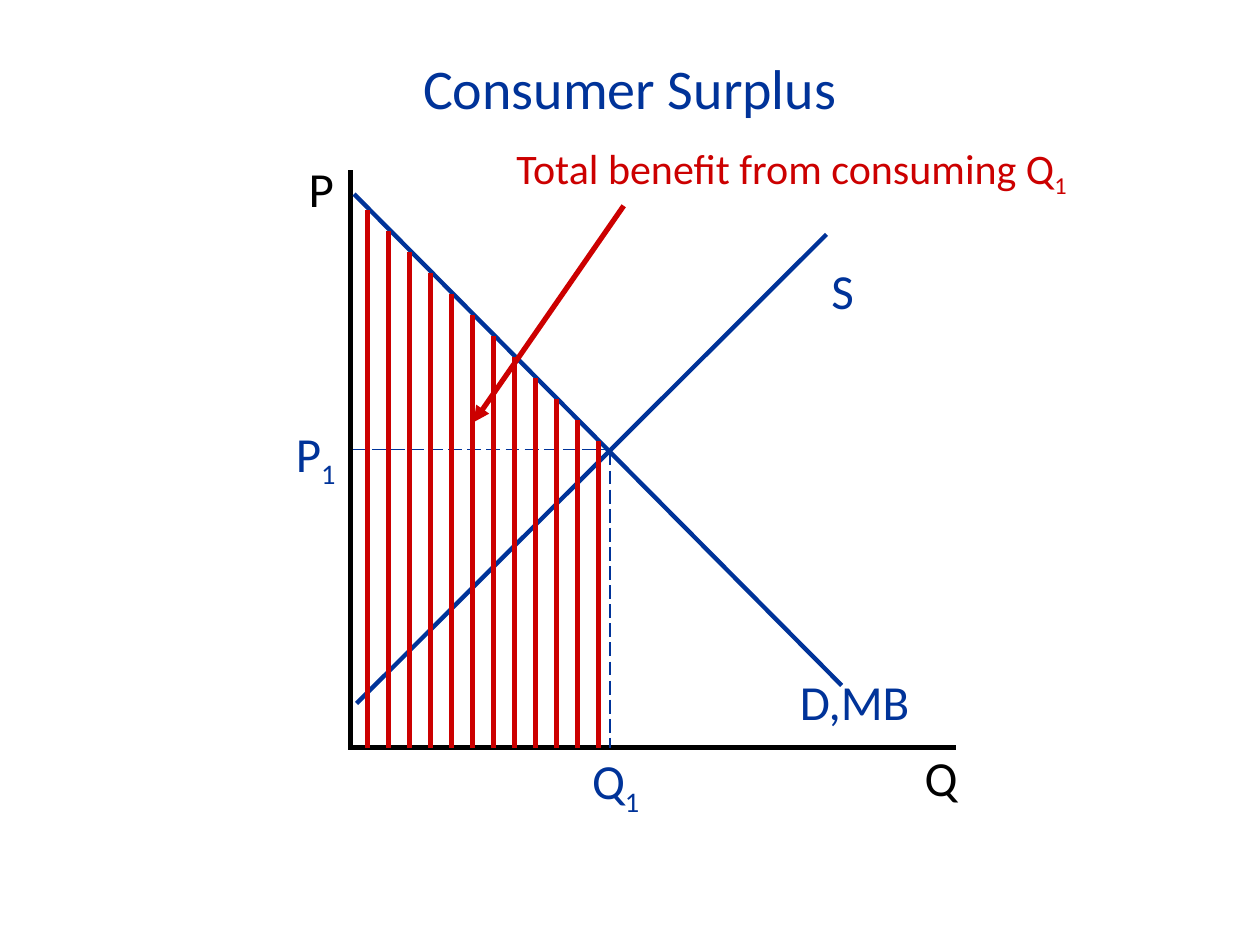
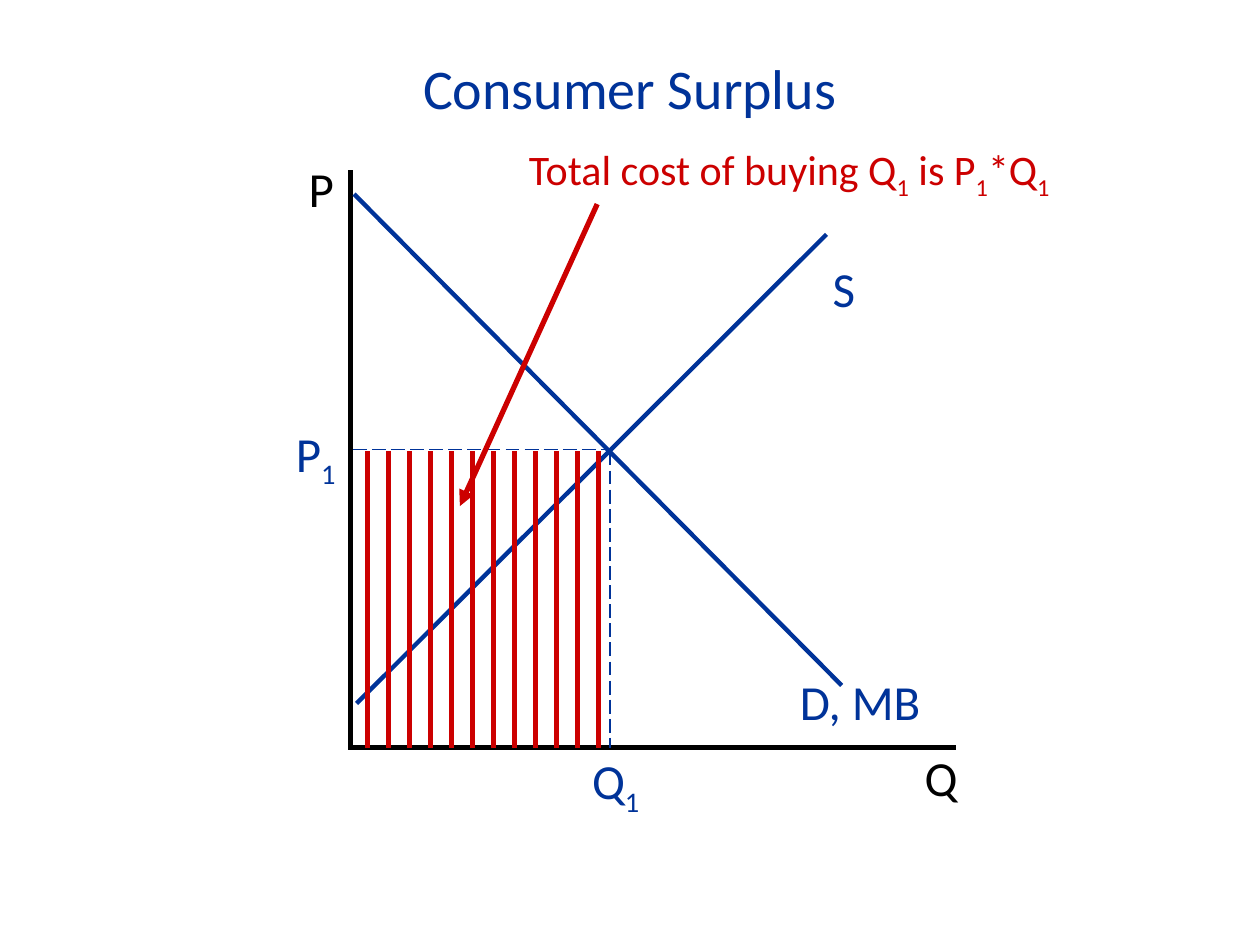
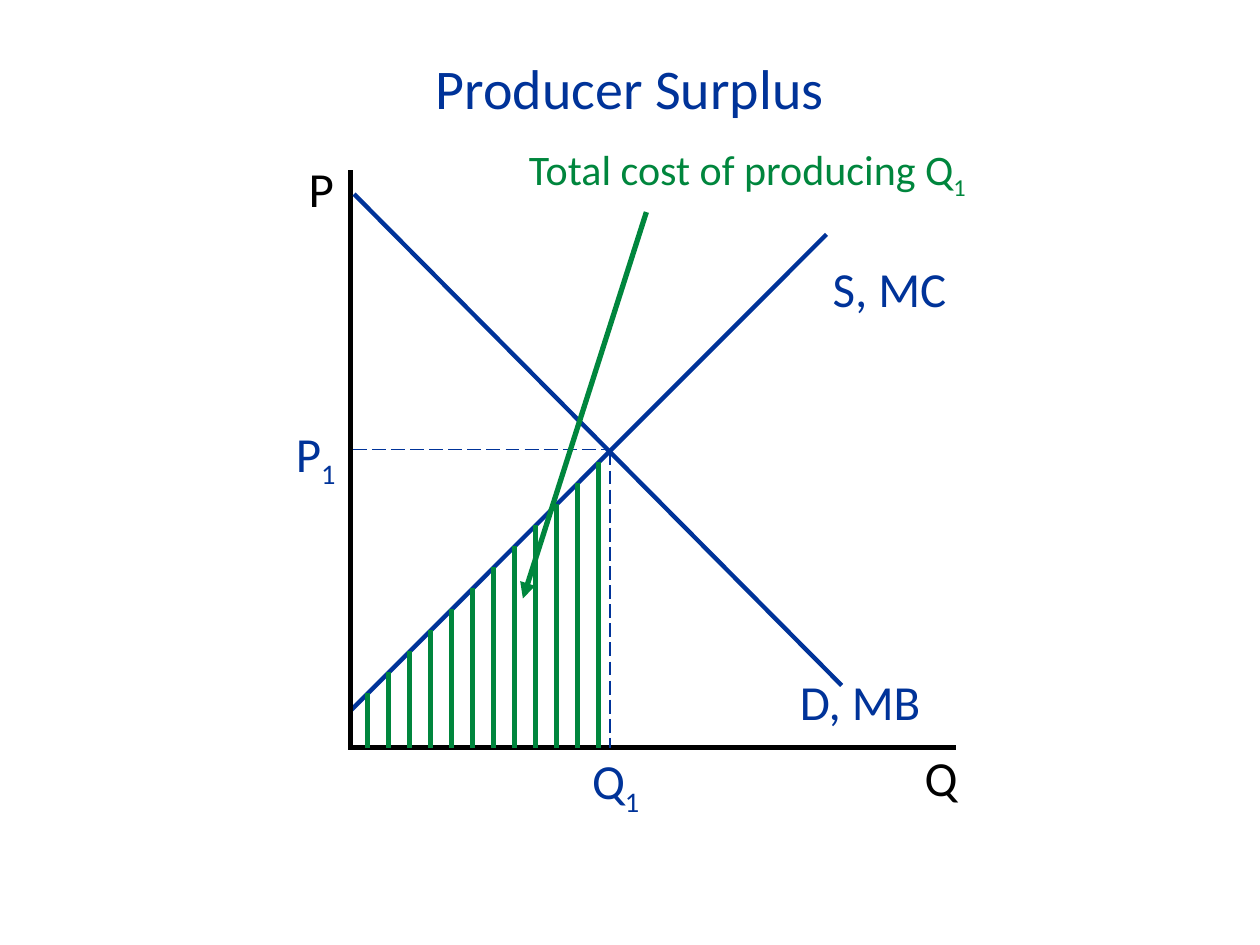
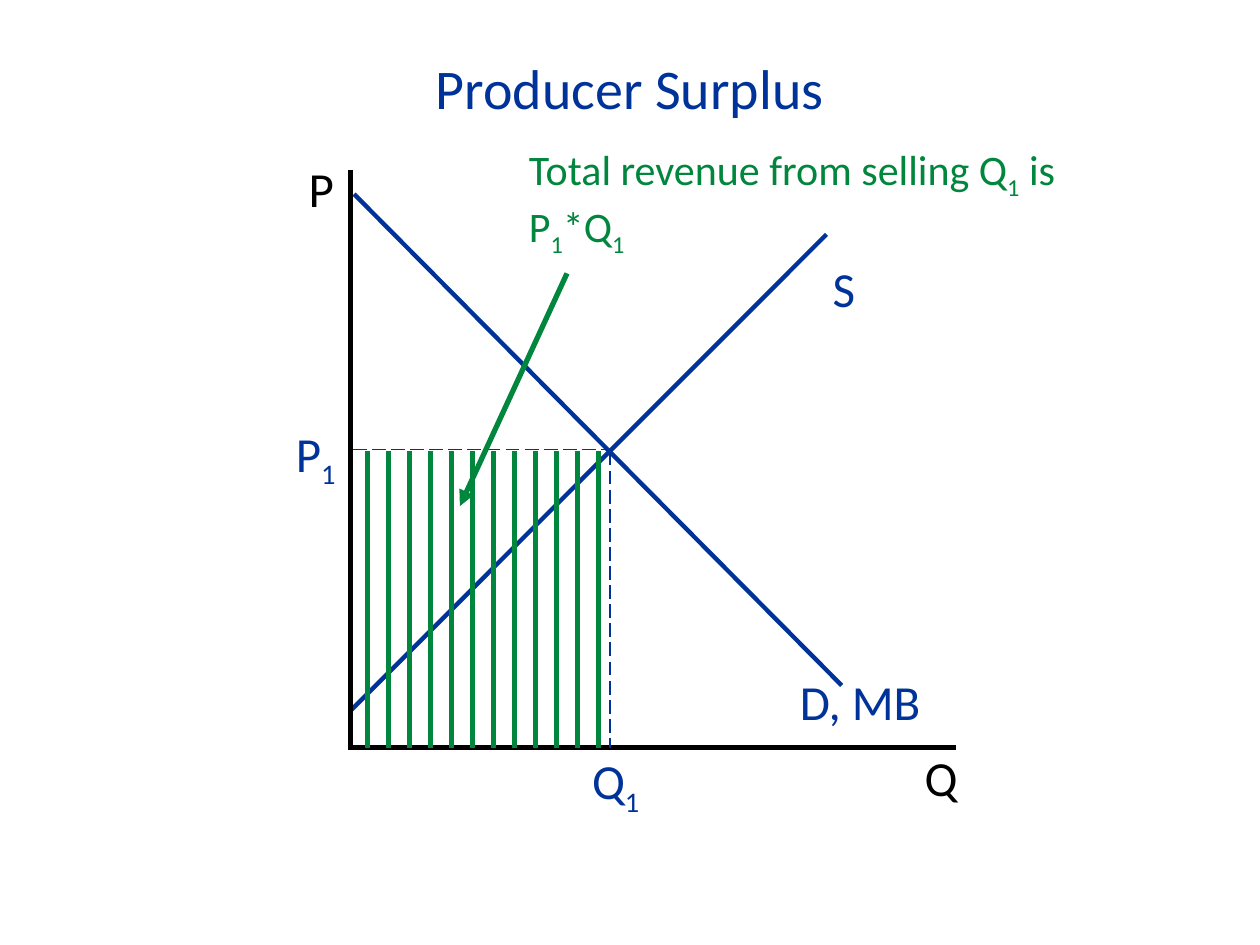
"""Build four slides on consumer and producer surplus."""
from pptx import Presentation
from pptx import util as u
from pptx.dml.color import RGBColor
from pptx.enum import dml, shapes, text
from pptx.oxml.ns import qn
from lxml import etree

BLUE = RGBColor(0x00, 0x33, 0x99)
RED = RGBColor(0xCC, 0x00, 0x00)
GREEN = RGBColor(0x00, 0x86, 0x3D)
BLACK = RGBColor(0x00, 0x00, 0x00)
FONT = "Calibri"
WIDE, HIGH = u.Inches(10), u.Inches(7.5)
COLS, ROWS = 60, 45
CELL = WIDE / COLS
PLOT = (16.7, 8.1)
BASE = 27.5
PRICE = 13.4
BARS = 12


def spot(box, x, y):
    """Turn a grid point within a box into slide lengths."""
    return int((box[0] + x) * CELL), int((box[1] + y) * CELL)


def write(frame, words, size, color, space=None):
    """Write words run by run; parts between underscores are subscripts."""
    frame.word_wrap = True
    para = frame.paragraphs[0]
    para.line_spacing = space
    for i, part in enumerate(words.split("_")):
        if not part:
            continue
        run = para.add_run()
        run.text = part
        run.font.name = FONT
        run.font.size = u.Pt(size)
        run.font.color.rgb = color
        if i % 2:
            run._r.get_or_add_rPr().set("baseline", "-25000")
    return para


def label(group, box, place, words, color, size=28, space=None):
    """Put a text box at a grid place (x, y, columns, rows) of a box."""
    x, y, wide, high = place
    area = group.add_textbox(*spot(box, x, y), int(wide * CELL), int(high * CELL))
    write(area.text_frame, words, size, color, space)


def line(group, box, start, end, color, width=2.5, dash=None, tip=False):
    """Draw a straight line between two grid points of a box."""
    link = group.add_connector(
        shapes.MSO_CONNECTOR.STRAIGHT, *spot(box, *start), *spot(box, *end))
    link.line.color.rgb = color
    link.line.width = u.Pt(width)
    if dash:
        link.line.dash_style = dash
    props = link._element.spPr
    if tip:
        etree.SubElement(props.find(qn("a:ln")), qn("a:tailEnd"), type="triangle")
    etree.SubElement(props, qn("a:effectLst"))


def head(slide, words):
    """Place and style the slide title."""
    title = slide.shapes.title
    title.left, title.top = int(WIDE * 0.07), int(HIGH * 0.05)
    title.width, title.height = int(WIDE * 0.86), int(HIGH * 0.085)
    frame = title.text_frame
    frame.vertical_anchor = text.MSO_ANCHOR.MIDDLE
    write(frame, words, 32, BLUE).alignment = text.PP_ALIGN.CENTER


def market(slide, box, supply, demand, foot, mark):
    """Draw the axes, both curves and the equilibrium as one group."""
    group = slide.shapes.add_group_shape().shapes
    dash = dml.MSO_LINE.LONG_DASH
    line(group, box, foot, (22.66, 3.06), BLUE)
    line(group, box, (0, 0), (0, 27.6), BLACK)
    line(group, box, (0, BASE), (28.84, BASE), BLACK)
    line(group, box, (0.16, 1.14), (23.38, 24.54), BLUE)
    line(group, box, (0.1, 13.3), (12.4, 13.3), BLUE, 1, dash)
    line(group, box, (12.35, PRICE), (12.35, BASE), BLUE, 1, dash)
    label(group, box, (20.8, 23.6, 8.64, 3.42), demand, BLUE)
    label(group, box, mark + (7.4 if "," in supply else 3.5, 3.42), supply, BLUE)
    label(group, box, (26.74, 27.2, 3.06, 3.42), "Q", BLACK)
    label(group, box, (-2.6, -0.3, 2.7, 2.94), "P", BLACK, space=0.8)
    label(group, box, (-3.2, 12.06, 3.48, 2.94), "P_1_", BLUE, space=0.8)
    label(group, box, (10.9, 27.66, 4.5, 2.88), "Q_1_", BLUE, space=0.8)


def hatch(slide, box, top, slope, color):
    """Shade an area with upright bars whose tops follow a slope."""
    for i in range(BARS):
        x = 0.8 + i
        line(slide.shapes, box, (x, top + slope * i), (x, BASE), color)


def note(slide, box, words, place, start, end, color):
    """Add the caption and the arrow from it to the shaded area."""
    line(slide.shapes, box, start, end, color, 3, tip=True)
    label(slide.shapes, box, place, words, color, 24)


def page(deck, title, color, curves, area, tag):
    """Add one slide with its diagram, shading and caption."""
    slide = deck.slides.add_slide(deck.slide_layouts[5])
    head(slide, title)
    market(slide, PLOT, *curves)
    hatch(slide, PLOT, *area, color)
    note(slide, PLOT, *tag, color)


def main():
    """Build and save the deck."""
    deck = Presentation()
    deck.slide_width, deck.slide_height = WIDE, HIGH
    buyer, maker = "Consumer Surplus", "Producer Surplus"
    near, axis = (0.28, 25.4), (0.04, 25.7)
    mark, goal = (22.36, 3.9), (5.2, 16)
    cap = (7.9, -1.56, 30, 3)
    flat = (PRICE, 0)
    page(deck, buyer, RED, ("S", "D,MB", near, (22.3, 4)), (1.9, 1),
         ("Total benefit from consuming Q_1_", (7.3, -1.62, 30, 3),
          (13, 1.7), (5.86, 12)))
    page(deck, buyer, RED, ("S", "D, MB", near, mark), flat,
         ("Total cost of buying Q_1_ is P_1_*Q_1_", cap, (11.74, 1.62), goal))
    page(deck, maker, GREEN, ("S, MC", "D, MB", axis, mark), (24.9, -1),
         ("Total cost of producing Q_1_", cap, (14.08, 2), (8.2, 20.4)))
    page(deck, maker, GREEN, ("S", "D, MB", axis, mark), flat,
         ("Total revenue from selling Q_1_ is P_1_*Q_1_",
          cap[:3] + (5.46,), (10.3, 4.92), goal))
    deck.save("out.pptx")


if __name__ == "__main__":
    main()
